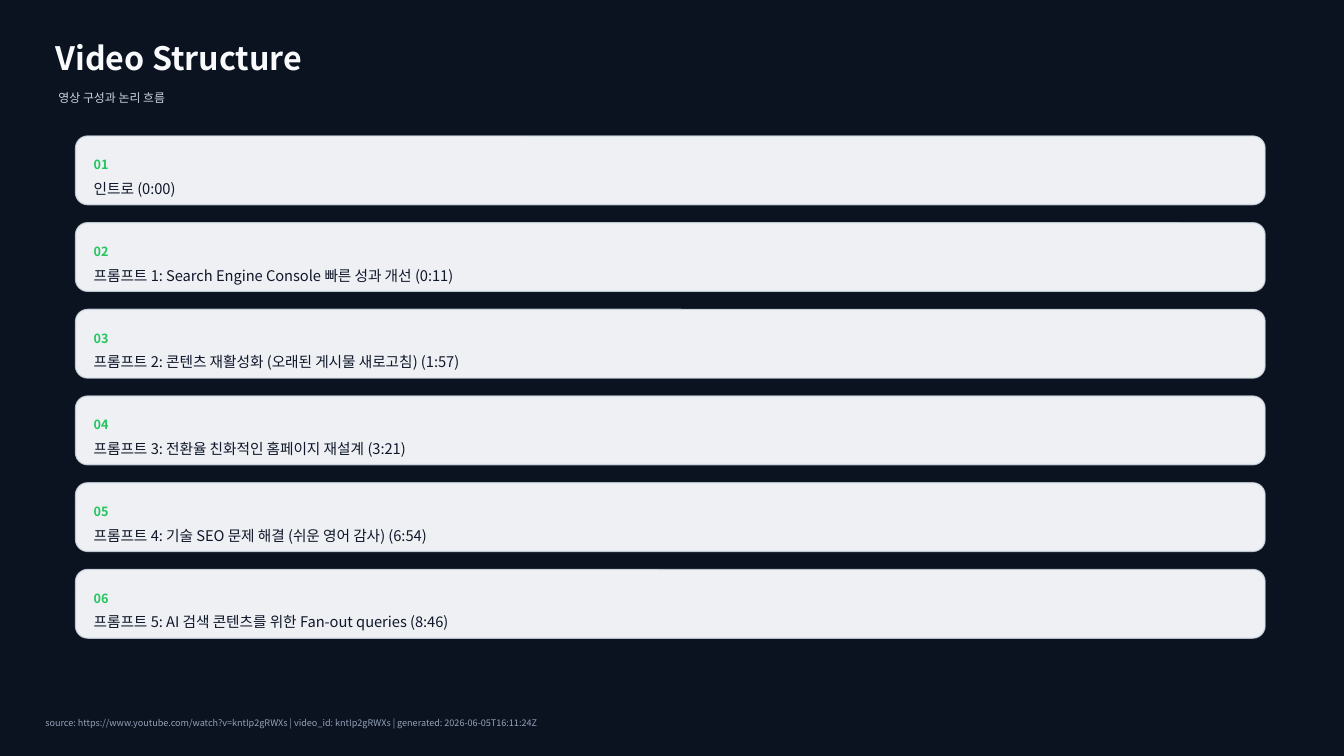
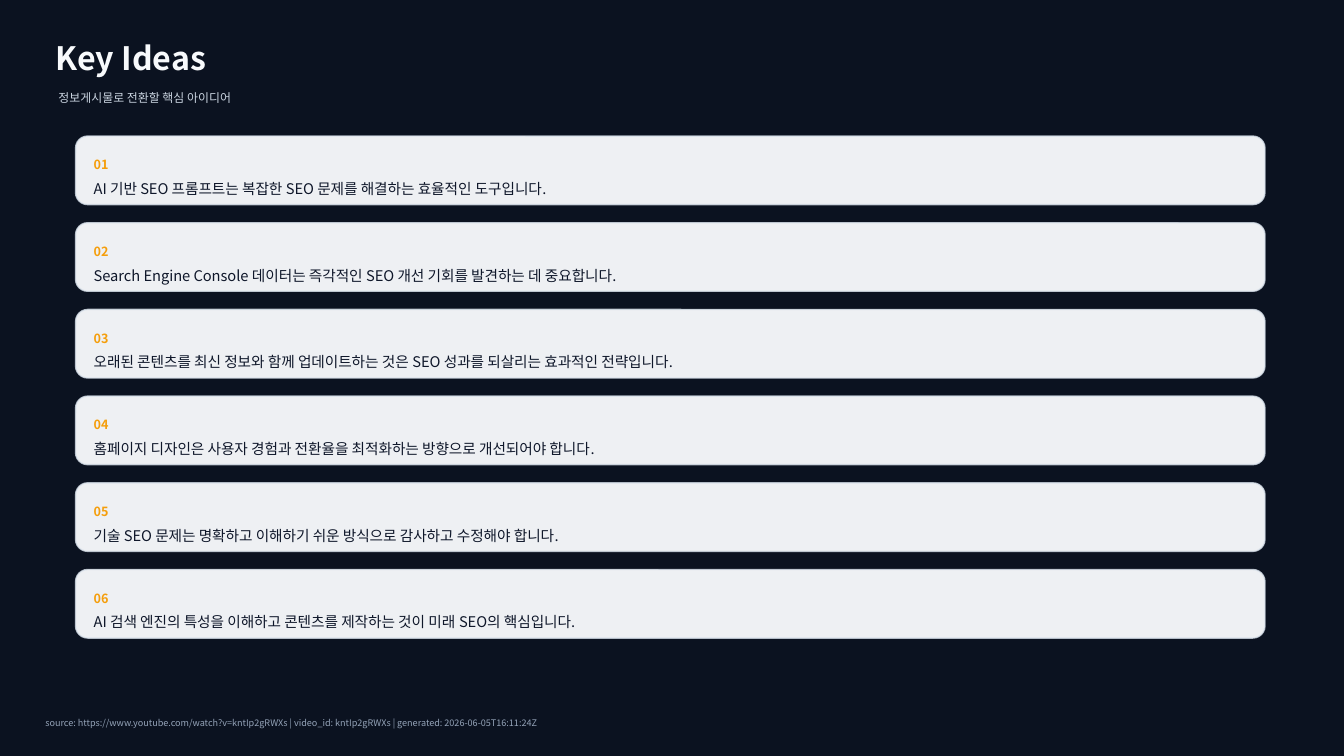
from lxml.etree import SubElement
from pptx import Presentation
from pptx.dml.color import RGBColor
from pptx.enum.shapes import MSO_SHAPE
from pptx.enum.text import MSO_ANCHOR, MSO_AUTO_SIZE, PP_ALIGN
from pptx.oxml.ns import qn
from pptx.util import Pt

FONT = "Noto Sans CJK KR"
NAVY = RGBColor(0x0B, 0x12, 0x20)
WHITE = RGBColor(0xF8, 0xFA, 0xFC)
SILVER = RGBColor(0xCB, 0xD5, 0xE1)
BORDER = RGBColor(0xD7, 0xE0, 0xEA)
INK = RGBColor(0x0F, 0x17, 0x2A)
GREY = RGBColor(0x94, 0xA3, 0xB8)
GREEN = RGBColor(0x22, 0xC5, 0x5E)
AMBER = RGBColor(0xF5, 0x9E, 0x0B)

# Boxes are (left, top, width, height) in points
TITLE_BOX = (39.6, 25.2, 864, 32.4)
SUBTITLE_BOX = (41.76, 59.76, 828, 20.16)
CARDS_BOX = (54, 97.2, 849.6, 358.56)
FOOTER_BOX = (32.4, 507.6, 892.8, 18)
CARD_GAP = 12.96
CARD_INSET = 12.96

SOURCE = ("source: https://www.youtube.com/watch?v=kntIp2gRWXs"
          " | video_id: kntIp2gRWXs | generated: 2026-06-05T16:11:24Z")

SLIDES = [
    ("Video Structure", "영상 구성과 논리 흐름", GREEN, [
        "인트로 (0:00)",
        "프롬프트 1: Search Engine Console 빠른 성과 개선 (0:11)",
        "프롬프트 2: 콘텐츠 재활성화 (오래된 게시물 새로고침) (1:57)",
        "프롬프트 3: 전환율 친화적인 홈페이지 재설계 (3:21)",
        "프롬프트 4: 기술 SEO 문제 해결 (쉬운 영어 감사) (6:54)",
        "프롬프트 5: AI 검색 콘텐츠를 위한 Fan-out queries (8:46)",
    ]),
    ("Key Ideas", "정보게시물로 전환할 핵심 아이디어", AMBER, [
        "AI 기반 SEO 프롬프트는 복잡한 SEO 문제를 해결하는 효율적인 도구입니다.",
        "Search Engine Console 데이터는 즉각적인 SEO 개선 기회를 발견하는 데 중요합니다.",
        "오래된 콘텐츠를 최신 정보와 함께 업데이트하는 것은 SEO 성과를 되살리는 효과적인 전략입니다.",
        "홈페이지 디자인은 사용자 경험과 전환율을 최적화하는 방향으로 개선되어야 합니다.",
        "기술 SEO 문제는 명확하고 이해하기 쉬운 방식으로 감사하고 수정해야 합니다.",
        "AI 검색 엔진의 특성을 이해하고 콘텐츠를 제작하는 것이 미래 SEO의 핵심입니다.",
    ]),
]


def write(sp, text, size, color, bold=False):
    tf = sp.text_frame
    tf.word_wrap = True
    tf.auto_size = MSO_AUTO_SIZE.NONE
    tf.vertical_anchor = MSO_ANCHOR.MIDDLE
    tf.margin_left = tf.margin_top = tf.margin_right = tf.margin_bottom = 0
    p = tf.paragraphs[0]
    p.alignment = PP_ALIGN.LEFT
    r = p.add_run()
    r.text = text
    r.font.name = FONT
    r.font.size = Pt(size)
    r.font.bold = bold
    r.font.color.rgb = color


def add_text(s, box, text, size, color, bold=False):
    sp = s.shapes.add_textbox(*map(Pt, box))
    write(sp, text, size, color, bold)


def set_opacity(fill_parent, percent):
    """Make the solid fill under an spPr or ln element translucent."""
    color = fill_parent.find(qn("a:solidFill")).find(qn("a:srgbClr"))
    SubElement(color, qn("a:alpha")).set("val", str(percent * 1000))


def add_header(s, title, subtitle):
    sp = s.shapes.title
    sp.left, sp.top, sp.width, sp.height = map(Pt, TITLE_BOX)
    write(sp, title, 23, WHITE, bold=True)
    add_text(s, SUBTITLE_BOX, subtitle, 8.5, SILVER)


def add_card(s, box, number, label, accent):
    left, top, width, height = box
    sp = s.shapes.add_shape(MSO_SHAPE.ROUNDED_RECTANGLE, *map(Pt, box))
    sp.adjustments[0] = 0.176
    sp.shadow.inherit = False
    sp.fill.solid()
    sp.fill.fore_color.rgb = WHITE
    sp.line.color.rgb = BORDER
    sp.line.width = Pt(1)
    sp_pr = sp.element.spPr
    set_opacity(sp_pr, 96)
    set_opacity(sp_pr.find(qn("a:ln")), 80)

    text_left, text_width = left + CARD_INSET, width - 2 * CARD_INSET
    add_text(s, (text_left, top + 11.52, text_width, 18),
             f"{number:02}", 9, accent, bold=True)
    add_text(s, (text_left, top + 28.44, text_width, 18), label, 10.5, INK)


def add_cards(s, box, labels, accent):
    left, top, width, height = box
    pitch = (height + CARD_GAP) / len(labels)
    for i, label in enumerate(labels):
        card = (left, top + i * pitch, width, pitch - CARD_GAP)
        add_card(s, card, i + 1, label, accent)


def add_list_slide(prs, title, subtitle, accent, labels):
    s = prs.slides.add_slide(prs.slide_layouts.get_by_name("Title Only"))
    add_header(s, title, subtitle)
    add_cards(s, CARDS_BOX, labels, accent)
    add_text(s, FOOTER_BOX, SOURCE, 6.5, GREY)


def main():
    prs = Presentation()
    prs.slide_width, prs.slide_height = Pt(960), Pt(540)
    background = prs.slide_master.background.fill
    background.solid()
    background.fore_color.rgb = NAVY
    for content in SLIDES:
        add_list_slide(prs, *content)
    prs.save("out.pptx")


if __name__ == "__main__":
    main()
